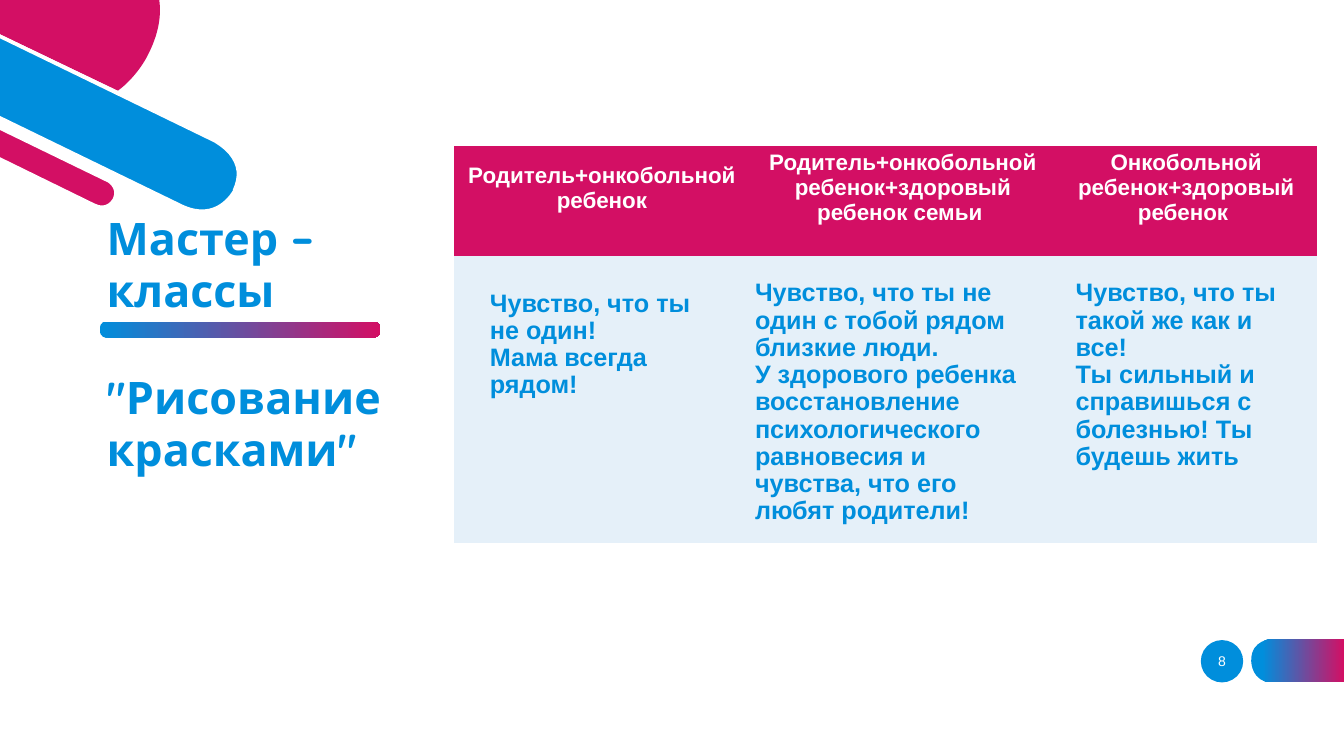
from collections import namedtuple
from dataclasses import dataclass

from lxml import etree
from pptx import Presentation, util as u
from pptx.dml.color import RGBColor
from pptx.enum import shapes, text
from pptx.oxml import ns

Box = namedtuple("Box", "left top width height")
PLAIN_TABLE = "{2D5ABB26-0587-4C30-8999-92F81FD0307C}"


@dataclass(frozen=True)
class Theme:
    blue: str = "008EDC"
    pink: str = "D30F64"
    white: str = "FFFFFF"
    pale: str = "E5F0F9"
    title_font: str = "Quicksand"
    body_font: str = "Arial"
    title_size: float = 32
    head_size: float = 16
    body_size: float = 18
    number_size: float = 10


THEME = Theme()

# Outlines in inches, from the top left corner of the decoration, back to front
RIBBONS = [
    (THEME.white, "M 0.01 0.81 L 0.28 0.94 C 0.6 1.1 0.89 1.08 1.15 0.89 C 1.34 0.74 1.44 0.55 1.44 0.55 "
     "L 1.46 0.52 C 1.55 0.34 1.58 0.16 1.56 0 L 1.6 0 C 1.62 0.17 1.59 0.35 1.49 0.54 L 1.48 0.57 "
     "C 1.47 0.58 1.37 0.77 1.17 0.92 C 1.06 1.01 0.9 1.09 0.69 1.09 C 0.56 1.09 0.42 1.06 0.26 0.98 "
     "L 0.01 0.86"),
    (THEME.blue, "M 2.12 1.39 C 2.12 1.39 2.49 1.57 2.33 1.89 L 2.32 1.9 C 2.32 1.9 2.16 2.22 1.8 2.04 "
     "L 0 1.17 L 0 0.36"),
    (THEME.pink, "M 1.46 0.56 C 1.46 0.56 1.36 0.76 1.17 0.9 L 0 0.34 L 0 0 L 1.58 0 "
     "C 1.6 0.15 1.58 0.33 1.46 0.56"),
    (THEME.pink, "M 0 1.26 L 1.06 1.78 C 1.06 1.78 1.2 1.85 1.14 1.97 L 1.14 1.98 "
     "C 1.14 1.98 1.07 2.11 0.93 2.04 L 0 1.58"),
    (THEME.white, "M 0.94 2.02 C 1.06 2.08 1.11 1.98 1.12 1.97 C 1.17 1.86 1.06 1.8 1.05 1.8 L 0 1.29 L 0 1.24 "
     "L 1.07 1.76 C 1.07 1.76 1.15 1.8 1.17 1.87 C 1.18 1.91 1.18 1.95 1.16 1.99 "
     "C 1.14 2.03 1.09 2.08 1.01 2.08 C 0.99 2.08 0.96 2.08 0.93 2.06 L 0 1.61 L 0 1.56"),
    (THEME.white, "M 1.81 2.03 C 2.15 2.19 2.3 1.9 2.31 1.89 L 2.31 1.88 C 2.37 1.75 2.36 1.64 2.27 1.53 "
     "C 2.21 1.46 2.12 1.41 2.12 1.41 L 0 0.38 L 0 0.34 L 2.14 1.37 C 2.14 1.38 2.32 1.46 2.37 1.63 "
     "C 2.4 1.71 2.39 1.8 2.35 1.9 L 2.34 1.91 C 2.34 1.91 2.23 2.12 2.01 2.12 "
     "C 1.94 2.12 1.87 2.1 1.79 2.06 L 0 1.19 L 0 1.15"),
]
TAB = "M 0.21 0.43 L 0.92 0.43 L 0.92 0 L 0.21 0 C 0.21 0 0 0 0 0.21 L 0 0.22 C 0 0.22 0 0.43 0.21 0.43"

HEADINGS = [
    "Родитель+онкобольной ребенок",
    "Родитель+онкобольной ребенок+здоровый ребенок семьи ",
    "Онкобольной ребенок+здоровый ребенок ",
]
FEELINGS = [
    (Box(0.26, 1.38, 2.49, 1.41), ["Чувство, что ты не один!", "Мама всегда рядом!"]),
    (Box(2.89, 1.28, 2.87, 1.41), [
        "Чувство, что ты не один с тобой рядом близкие люди.",
        "У здорового ребенка восстановление психологического равновесия и чувства, что его любят родители!"]),
    (Box(6.07, 1.28, 2.49, 1.41), [
        "Чувство, что ты такой же как и все!", "Ты сильный и справишься с болезнью! Ты будешь жить"]),
]


def inside(box, part):
    return Box(box.left + part.left, box.top + part.top, part.width, part.height)


def place(box):
    return [u.Inches(value) for value in box]


def write(frame, lines, *, size, color, font=THEME.body_font, bold=True,
          align=text.PP_ALIGN.LEFT, spacing=1.0, gap=0):
    for index, line in enumerate(lines):
        para = frame.add_paragraph() if index else frame.paragraphs[0]
        para.alignment, para.line_spacing = align, spacing
        para.space_before = u.Pt(gap if index else 0)
        span = para.add_run()
        span.text = line
        span.font.name, span.font.size, span.font.bold = font, u.Pt(size), bold
        span.font.color.rgb = RGBColor.from_string(color)


def text_box(page, box, lines, anchor=text.MSO_ANCHOR.TOP, **style):
    frame = page.shapes.add_textbox(*place(box)).text_frame
    frame.word_wrap, frame.vertical_anchor = True, anchor
    write(frame, lines, **style)


def paint(shape, *colors, start=0.0):
    """One colour gives a solid fill, two a gradient from left to right."""
    shape.shadow.inherit = False
    shape.line.fill.background()
    if len(colors) == 1:
        shape.fill.solid()
        shape.fill.fore_color.rgb = RGBColor.from_string(colors[0])
        return
    shape.fill.gradient()
    shape.fill.gradient_angle = 0
    for stop, color, position in zip(shape.fill.gradient_stops, colors, (start, 1.0)):
        stop.color.rgb = RGBColor.from_string(color)
        stop.position = position


def free_shape(page, box, outline):
    """Draw M, L and C commands; each C takes three points of the outline."""
    points, curve_starts = [], []
    for command in outline.replace("L", "|L").replace("C", "|C").split("|"):
        letter, *numbers = command.split()
        if letter == "C":
            curve_starts.append(len(points))
        points += [(u.Inches(box.left + float(x)), u.Inches(box.top + float(y)))
                   for x, y in zip(numbers[::2], numbers[1::2])]
    builder = page.shapes.build_freeform(*points[0])
    builder.add_line_segments(points[1:], close=True)
    shape = builder.convert_to_shape()
    # Join the three straight steps of each curve into one Bezier segment
    nodes = list(shape.element.xpath(".//a:path")[0])
    for start in curve_starts:
        curve = etree.Element(ns.qn("a:cubicBezTo"))
        nodes[start].addprevious(curve)
        for node in nodes[start:start + 3]:
            curve.append(node[0])
            node.getparent().remove(node)
    return shape


def add_ribbons(page, box):
    for color, outline in RIBBONS:
        paint(free_shape(page, box, outline), color)


def add_title(page, box):
    bar_box = inside(box, Box(0.03, -0.37, 2.78, 0.16))
    bar = page.shapes.add_shape(shapes.MSO_SHAPE.ROUNDED_RECTANGLE, *place(bar_box))
    bar.adjustments[0] = 0.4
    paint(bar, THEME.blue, THEME.pink)
    text_box(page, box, ["Мастер – классы", '"Рисование красками"'], text.MSO_ANCHOR.BOTTOM,
             size=THEME.title_size, color=THEME.blue, font=THEME.title_font, spacing=0.97, gap=39)


def add_feelings_table(page, box):
    frame = page.shapes.add_table(2, 3, *place(box))
    frame.element.xpath(".//a:tableStyleId")[0].text = PLAIN_TABLE
    table = frame.table
    for column, width in zip(table.columns, (2.94, 3.03, 2.59)):
        column.width = u.Inches(width)
    for row, height in zip(table.rows, (1.09, 2.85)):
        row.height = u.Inches(height)
    for row, color in zip(table.rows, (THEME.pink, THEME.pale)):
        for cell in row.cells:
            cell.fill.solid()
            cell.fill.fore_color.rgb = RGBColor.from_string(color)
    for cell, heading in zip(table.rows[0].cells, HEADINGS):
        cell.vertical_anchor = text.MSO_ANCHOR.MIDDLE
        cell.margin_top, cell.margin_bottom = u.Inches(0.01), u.Inches(0.27)
        write(cell.text_frame, [heading], size=THEME.head_size, color=THEME.white,
              align=text.PP_ALIGN.CENTER)
    # Feelings lie over the lower row
    for part, lines in FEELINGS:
        text_box(page, inside(box, part), lines, size=THEME.body_size, color=THEME.blue, spacing=0.9)


def add_page_number(page, box):
    disc_box = inside(box, Box(0.09, -0.01, 0.42, 0.42))
    paint(page.shapes.add_shape(shapes.MSO_SHAPE.OVAL, *place(disc_box)), THEME.blue)
    tab = free_shape(page, inside(box, Box(0.59, -0.02, 0.92, 0.43)), TAB)
    paint(tab, THEME.blue, THEME.pink, start=0.12)
    text_box(page, box, ["8"], text.MSO_ANCHOR.MIDDLE, size=THEME.number_size, color=THEME.white,
             bold=False, align=text.PP_ALIGN.CENTER)


def main():
    deck = Presentation()
    deck.slide_width, deck.slide_height = u.Inches(13.33), u.Inches(7.5)
    page = deck.slides.add_slide(deck.slide_layouts[6])
    add_ribbons(page, Box(0, 0, 2.4, 2.12))
    add_title(page, Box(0.96, 3.56, 3.89, 1.22))
    add_feelings_table(page, Box(4.5, 1.45, 8.56, 3.94))
    add_page_number(page, Box(11.82, 6.36, 0.6, 0.4))
    deck.save("out.pptx")


if __name__ == "__main__":
    main()
